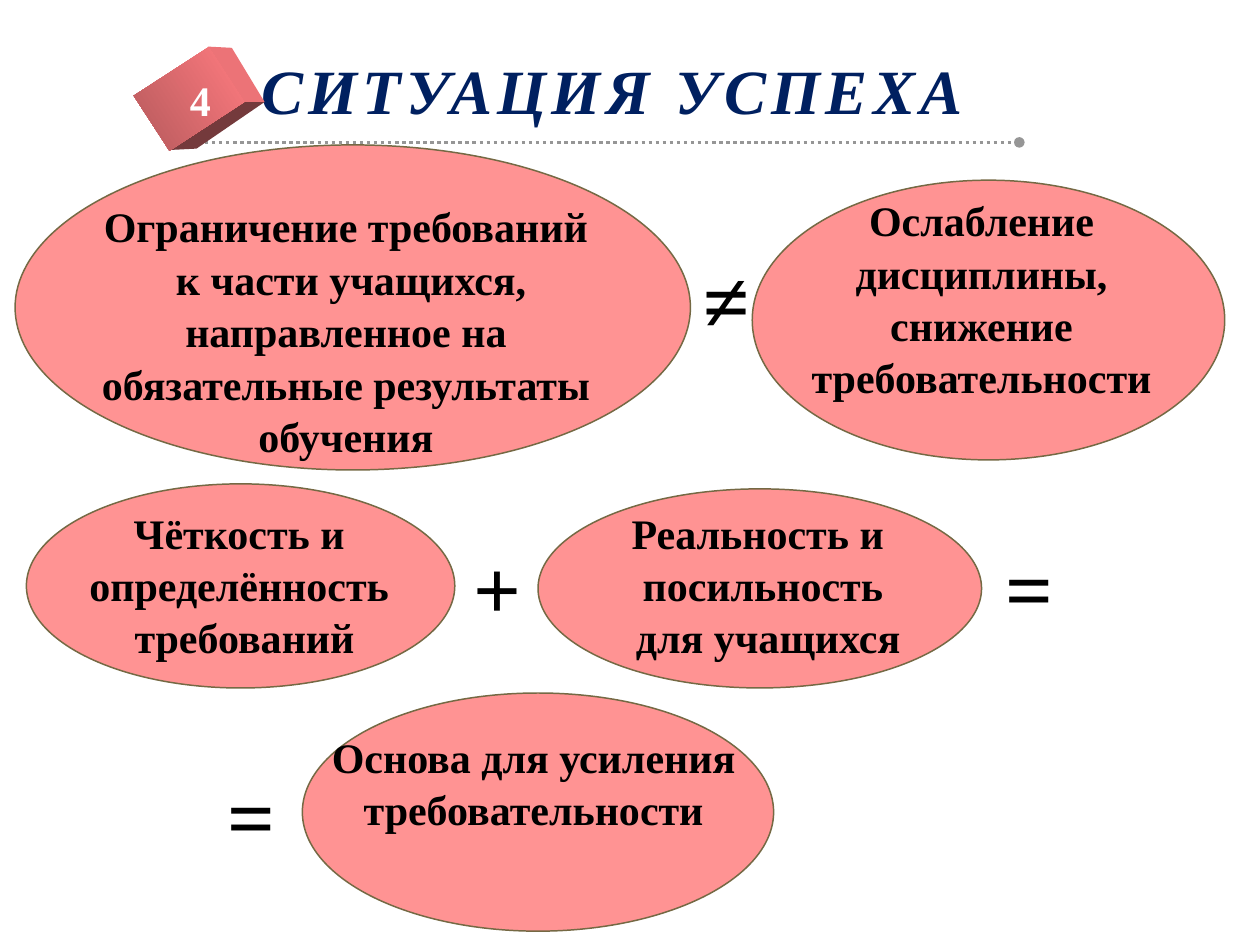
from lxml import etree
from pptx import Presentation
from pptx import util as u
from pptx.dml.color import RGBColor
from pptx.enum import dml, shapes, text
from pptx.oxml import ns, parse_xml

COLORS = {
    "title": "002060", "rule": "969696", "white": "FFFFFF", "black": "000000",
    "oval": "FF9393", "oval_line": "756944",
    "cube_light": "FF7C80", "cube_dark": "B6595C",
    "cube_right": "EC7377", "cube_bottom": "743A3C",
}
FONT = "Times New Roman"
STATEMENT = {"size": u.Pt(24), "bold": True, "name": FONT}
SIGN = {**STATEMENT, "size": u.Pt(48)}
HEADING = {**STATEMENT, "size": u.Pt(36), "italic": True}

OVALS = [
    (0.12, 1.15, 5.36, 2.58),
    (5.97, 1.43, 3.75, 2.22),
    (0.21, 3.84, 3.4, 1.62),
    (2.4, 5.5, 3.74, 1.89),
    (4.27, 3.88, 3.52, 1.58),
]
STATEMENTS = [
    ((0.35, 1.53, 4.79, 2.12), True,
     ["Ограничение требований",
      " к части учащихся, направленное на обязательные результаты обучения"]),
    ((5.97, 1.48, 3.64, 1.72), True,
     ["Ослабление дисциплины,", "снижение требовательности"]),
    ((0.45, 3.96, 2.98, 1.31), False,
     ["Чёткость и ", "определённость ", "требований"]),
    ((4.79, 3.96, 2.53, 1.31), False,
     ["Реальность и ", "посильность", " для учащихся"]),
    ((2.51, 5.74, 3.45, 1.31), True,
     ["Основа для усиления требовательности"]),
]
SIGNS = [("≠", 5.48, 1.88), ("+", 3.66, 4.17), ("=", 7.88, 4.17), ("=", 1.71, 5.98)]
CUBE_SIDES = {
    "cube_right": [(1.65, 0.37), (1.84, 0.38), (2.1, 0.81), (1.93, 0.81)],
    "cube_bottom": [(1.93, 0.81), (2.1, 0.81), (1.56, 1.18), (1.36, 1.19)],
}


def rgb(key):
    return RGBColor.from_string(COLORS[key])


def inches(box):
    return [u.Inches(value) for value in box]


def format_font(font, values, color):
    for attribute, value in values.items():
        setattr(font, attribute, value)
    font.color.rgb = rgb(color)


def fill_plain(shape, color):
    shape.shadow.inherit = False
    shape.fill.solid()
    shape.fill.fore_color.rgb = rgb(color)


def add_title(slide, words):
    title = slide.shapes.title
    title.left, title.top, title.width, title.height = inches((1.63, 0.31, 6.46, 0.75))
    frame = title.text_frame
    frame.auto_size = text.MSO_AUTO_SIZE.NONE
    frame.vertical_anchor = text.MSO_ANCHOR.BOTTOM
    paragraph = frame.paragraphs[0]
    paragraph.alignment = text.PP_ALIGN.CENTER
    run = paragraph.add_run()
    run.text = words
    format_font(run.font, HEADING, "title")
    properties = run._r.get_or_add_rPr()
    properties.set("spc", "300")
    properties.insert(0, parse_xml(
        f'<a:ln {ns.nsdecls("a")} w="9525"><a:solidFill>'
        f'<a:srgbClr val="{COLORS["white"]}"/></a:solidFill></a:ln>'))


def add_rule(slide):
    rule = slide.shapes.add_connector(
        shapes.MSO_CONNECTOR.STRAIGHT, *inches((1.57, 1.13, 8.09, 1.13)))
    rule.line.color.rgb = rgb("rule")
    rule.line.width = u.Pt(2)
    rule.line.dash_style = dml.MSO_LINE.ROUND_DOT
    etree.SubElement(rule.line._get_or_add_ln(), ns.qn("a:tailEnd"), type="oval")
    etree.SubElement(rule._element.spPr, ns.qn("a:effectLst"))


def add_cube(slide):
    for color, corners in CUBE_SIDES.items():
        start, *rest = [inches(corner) for corner in corners]
        builder = slide.shapes.build_freeform(*start)
        builder.add_line_segments(rest, close=True)
        side = builder.convert_to_shape()
        fill_plain(side, color)
        side.line.fill.background()
    front = slide.shapes.add_shape(
        shapes.MSO_SHAPE.RECTANGLE, *inches((1.24, 0.43, 0.52, 0.71)))
    front.rotation = 57
    front.shadow.inherit = False
    front.line.fill.background()
    front.fill.gradient()
    front.fill.gradient_angle = 270
    for stop, position, color in zip(
            front.fill.gradient_stops, (0, 1), ("cube_light", "cube_dark")):
        stop.position = position
        stop.color.rgb = rgb(color)


def add_oval(slide, box):
    oval = slide.shapes.add_shape(shapes.MSO_SHAPE.OVAL, *inches(box))
    fill_plain(oval, "oval")
    oval.line.color.rgb = rgb("oval_line")
    oval.line.width = u.Pt(0.85)


def add_words(slide, box, lines, values, color="black", wrap=False):
    frame = slide.shapes.add_textbox(*inches(box)).text_frame
    frame.word_wrap = wrap
    for index, line in enumerate(lines):
        paragraph = frame.add_paragraph() if index else frame.paragraphs[0]
        paragraph.alignment = text.PP_ALIGN.CENTER
        paragraph.line_spacing = 1.04
        run = paragraph.add_run()
        run.text = line
        format_font(run.font, values, color)


def main():
    deck = Presentation()
    deck.slide_width, deck.slide_height = inches((10, 7.5))
    slide = deck.slides.add_slide(deck.slide_layouts[5])
    add_title(slide, "СИТУАЦИЯ УСПЕХА")
    add_rule(slide)
    add_cube(slide)
    add_words(slide, (1.4, 0.53, 0.38, 0.5), ["4"], STATEMENT, "white")
    for box in OVALS:
        add_oval(slide, box)
    for box, wrap, lines in STATEMENTS:
        add_words(slide, box, lines, STATEMENT, wrap=wrap)
    for sign, left, top in SIGNS:
        add_words(slide, (left, top, 0.57, 0.91), [sign], SIGN)
    deck.save("out.pptx")


if __name__ == "__main__":
    main()
